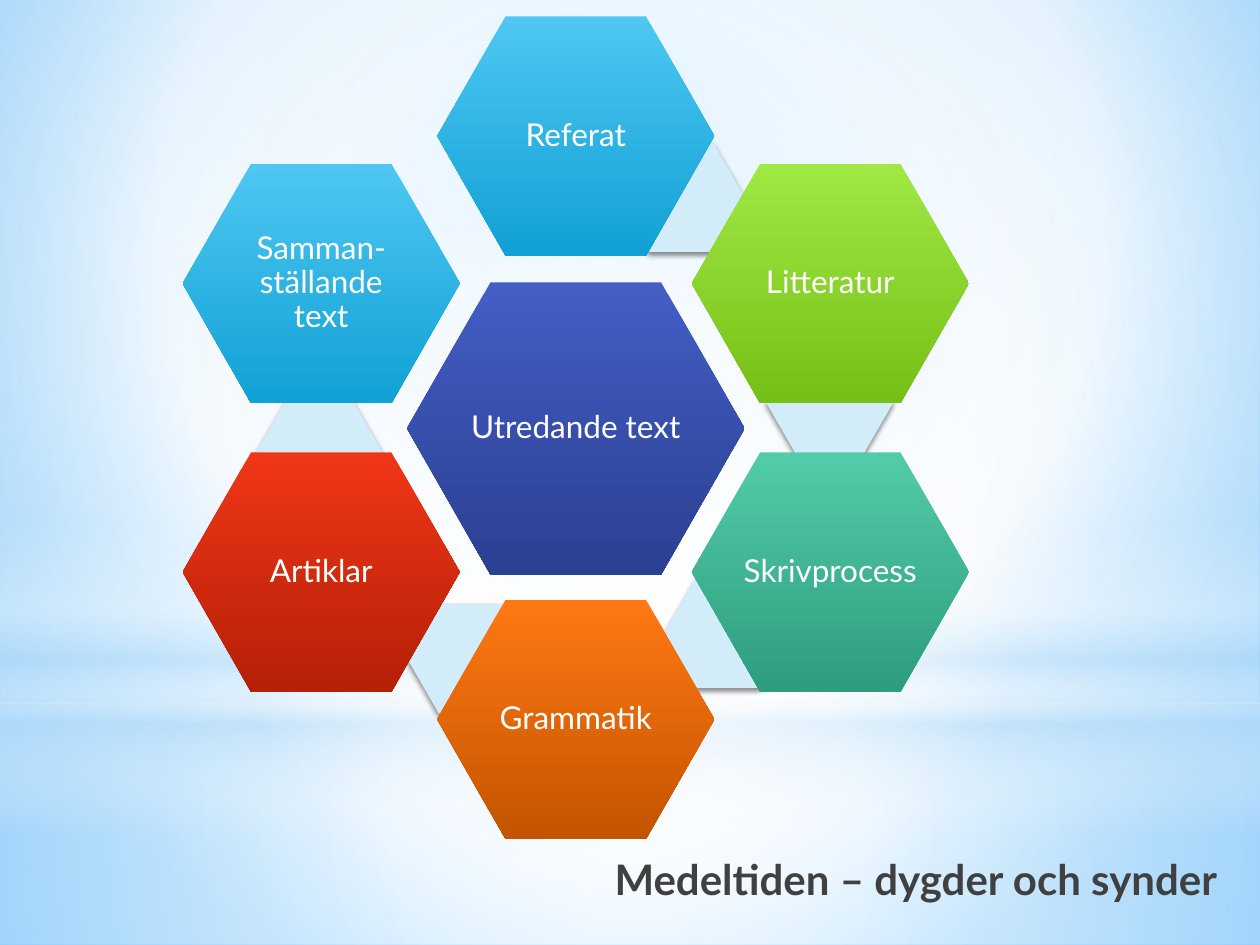
from lxml import etree
from pptx import Presentation
from pptx.dml.color import RGBColor
from pptx.enum.shapes import MSO_SHAPE as Shape
from pptx.enum.text import MSO_ANCHOR as Anchor, PP_ALIGN as Align
from pptx.oxml.ns import qn
from pptx.util import Inches, Pt

deck = Presentation()
deck.slide_width, deck.slide_height = Inches(10), Inches(7.5)
page = deck.slides.add_slide(deck.slide_layouts[5])


def paint(properties, stops, focus=None):
    gradient = etree.Element(qn("a:gradFill"), rotWithShape="1")
    stop_list = etree.SubElement(gradient, qn("a:gsLst"))
    for position, color, opacity in stops:
        stop = etree.SubElement(stop_list, qn("a:gs"), pos=str(position * 1000))
        tint = etree.SubElement(stop, qn("a:srgbClr"), val=color)
        if opacity < 100:
            etree.SubElement(tint, qn("a:alpha"), val=str(opacity * 1000))
    if focus:
        radial = etree.SubElement(gradient, qn("a:path"), path="circle")
        edges = {side: str(share * 1000) for side, share in zip("ltrb", focus)}
        etree.SubElement(radial, qn("a:fillToRect"), **edges)
    else:
        etree.SubElement(gradient, qn("a:lin"), ang="5400000", scaled="0")
    solid = properties.find(qn("a:solidFill"))
    properties.replace(solid, gradient)


def add_plain(kind, left, top, width, height, color="FFFFFF"):
    shape = page.shapes.add_shape(
        kind, Inches(left), Inches(top), Inches(width), Inches(height))
    shape.fill.solid()
    shape.fill.fore_color.rgb = RGBColor.from_string(color)
    shape.line.fill.background()
    shape.shadow.inherit = False
    return shape


page.background.fill.solid()
paint(page.background._cSld.find(".//" + qn("p:bgPr")),
      [(0, "9ED5FF", 100), (60, "FFFFFF", 100), (100, "5BB9FF", 100)],
      (20, 10, 20, 60))

center = (50, 50, 50, 50)
horizon = 5.58
backdrops = [
    (Shape.RECTANGLE, horizon, 7.5 - horizon, center,
     [(0, "FFFFFF", 91), (37, "FFFFFF", 76), (100, "B4DCFA", 79)]),
    (Shape.RECTANGLE, 0, horizon, center,
     [(0, "FFFFFF", 89), (48, "FFFFFF", 62), (100, "B4DCFA", 79)]),
    (Shape.RECTANGLE, 4.12, 2.5, None,
     [(0, "FFFFFF", 0), (29, "FFFFFF", 30), (45, "B4DCFA", 40),
      (55, "FFFFFF", 26), (65, "B4DCFA", 60), (100, "FFFFFF", 0)]),
    (Shape.OVAL, 1.75, horizon, center,
     [(0, "FFFFFF", 100), (56, "FFFFFF", 0)]),
]
for kind, top, height, focus, stops in backdrops:
    backdrop = add_plain(kind, 0, top, 10, height)
    paint(backdrop._element.spPr, stops, focus)

title = page.shapes.title
page.shapes._spTree.append(title._element)
title.left, title.top = Inches(4.06), Inches(6.72)
title.width, title.height = Inches(5.78), Inches(0.79)
frame = title.text_frame
frame.text = "Medeltiden – dygder och synder"
frame.vertical_anchor = Anchor.TOP
frame.margin_right = Inches(0.18)
frame.paragraphs[0].alignment = Align.RIGHT
font = frame.paragraphs[0].runs[0].font
font.name, font.size, font.bold = "Lato", Pt(24), True
font.color.rgb = RGBColor.from_string("404040")

links = [(4.9, 1.13), (6.08, 2.76), (5.27, 4.59), (3.23, 4.79), (2.03, 3.16)]
for left, top in links:
    link = add_plain(Shape.HEXAGON, left, top, 1.01, 0.87, "D2ECFA")
    link.adjustments[0], link.adjustments[1] = 0.289, 1.155
    effects = link._element.spPr.find(qn("a:effectLst"))
    shadow = etree.SubElement(
        effects, qn("a:outerShdw"), blurRad=str(Pt(3.1)), dist=str(Pt(1.8)),
        dir="5400000", rotWithShape="0")
    shade = etree.SubElement(shadow, qn("a:srgbClr"), val="000000")
    etree.SubElement(shade, qn("a:alpha"), val="45000")

columns = [2.55, 4.57, 6.59]
rows = [1.08, 2.25, 3.4, 4.54, 5.71]
core, petal = (2.68, 2.32), (2.2, 1.9)
topics = [
    ("Utredande text", 1, 2, core, "435EC5", "2B4092"),
    ("Referat", 1, 0, petal, "4EC7F2", "11A1D4"),
    ("Litteratur", 2, 1, petal, "A0E844", "75C016"),
    ("Skrivprocess", 2, 3, petal, "52CBA9", "2E9D7F"),
    ("Grammatik", 1, 4, petal, "FF7813", "C45400"),
    ("Artiklar", 0, 3, petal, "F03617", "B52007"),
    ("Samman-ställande text", 0, 1, petal, "4EC7F2", "11A1D4"),
]
for label, column, row, (width, height), light, dark in topics:
    topic = add_plain(Shape.HEXAGON, columns[column] - width / 2,
                      rows[row] - height / 2, width, height)
    topic.adjustments[0], topic.adjustments[1] = 0.286, 1.155
    paint(topic._element.spPr, [(0, light, 100), (100, dark, 100)])
    frame = topic.text_frame
    frame.text = label
    frame.word_wrap = True
    frame.vertical_anchor = Anchor.MIDDLE
    frame.margin_left = frame.margin_right = Inches(0.03)
    frame.margin_top = frame.margin_bottom = Inches(0.03)
    para = frame.paragraphs[0]
    para.alignment, para.line_spacing = Align.CENTER, 0.9
    font = para.runs[0].font
    font.name, font.size = "Lato", Pt(18)
    font.color.rgb = RGBColor.from_string("FFFFFF")

deck.save("out.pptx")
